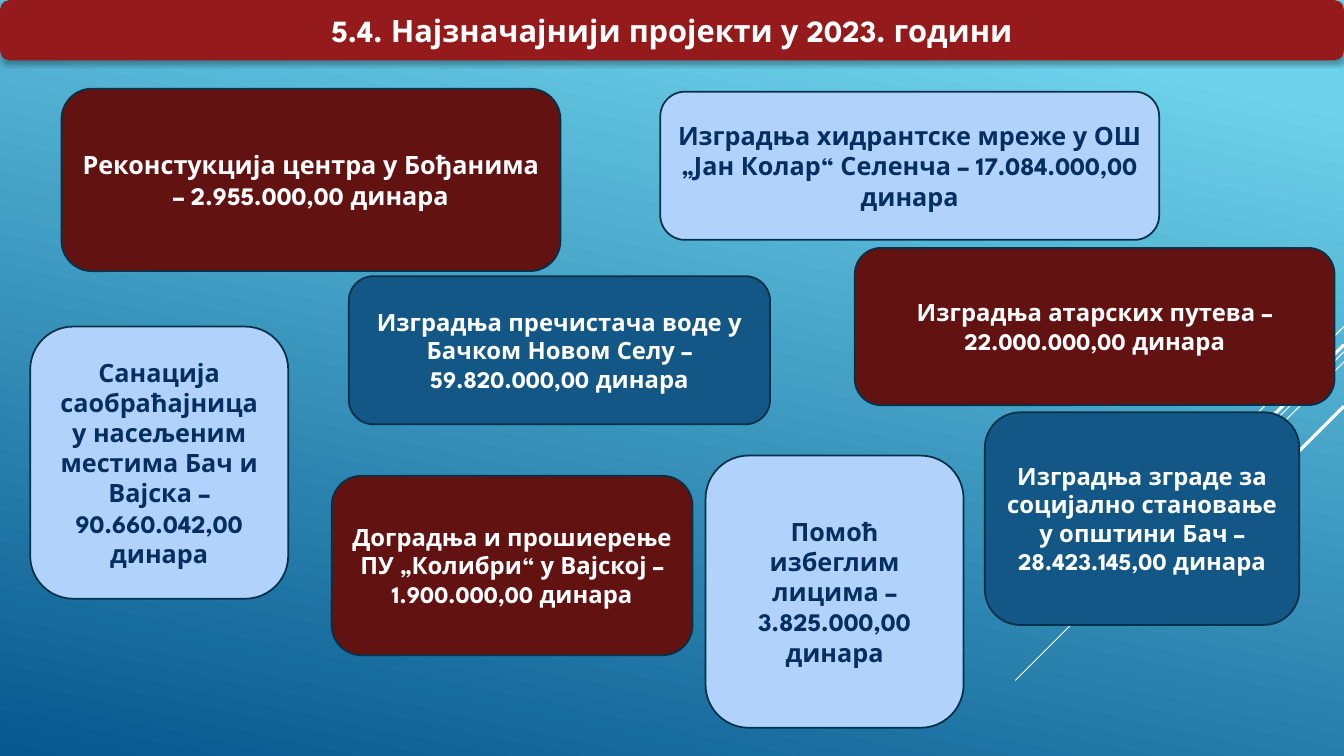
"""Build a slide of the most important projects of 2023."""
from dataclasses import dataclass

from lxml import etree
from pptx import Presentation
from pptx.dml.color import RGBColor
from pptx.enum.shapes import MSO_CONNECTOR, MSO_SHAPE
from pptx.enum.text import MSO_ANCHOR, PP_ALIGN
from pptx.oxml.ns import qn
from pptx.shapes.autoshape import Shape
from pptx.slide import Slide
from pptx.util import Inches, Length, Pt

ROUND = MSO_SHAPE.ROUNDED_RECTANGLE
STRAIGHT = MSO_CONNECTOR.STRAIGHT
MIDDLE = MSO_ANCHOR.MIDDLE
CENTER = PP_ALIGN.CENTER

COLS, ROWS = 133.33, 75
FONT = "League Spartan"
HEX = {
    "sky": "6ED2EB", "sea": "06588E", "white": "FFFFFF", "navy": "052F61",
    "red": "941A1B", "wine": "631212", "pale": "B1D3FB", "blue": "125785",
    "edge": "043148", "black": "000000",
}


@dataclass(frozen=True)
class Box:
    """A rounded box placed in grid columns and rows."""
    col: float
    row: float
    wide: float
    high: float
    fill: str
    size: int
    text: str
    ink: str = "white"


@dataclass(frozen=True)
class Ray:
    """A diagonal line running down and left from the right edge."""
    row: float
    reach: float
    width: float


TITLE = Box(0, 0, COLS, 6, "red", 22, "5.4. Најзначајнији пројекти у 2023. години")
BOXES = [
    Box(6.1, 8.8, 49.5, 18.1, "wine", 18,
        "Реконстукција центра у Бођанима – 2.955.000,00 динара"),
    Box(32.9, 47.2, 35.8, 17.8, "wine", 17,
        "Доградња и прошиерење ПУ „Колибри“ у Вајској – 1.900.000,00 динара"),
    Box(65.5, 9.1, 49.5, 14.7, "pale", 18,
        "Изградња хидрантске мреже у ОШ „Јан Колар“ Селенча – 17.084.000,00 динара",
        "navy"),
    Box(84.8, 24.6, 47.6, 15.6, "wine", 17,
        "Изградња атарских путева – 22.000.000,00 динара"),
    Box(70, 45.2, 25.6, 27, "pale", 18,
        "Помоћ избеглим лицима – 3.825.000,00 динара", "navy"),
    Box(34.6, 27.4, 41.8, 14.7, "blue", 17,
        "Изградња пречистача воде у Бачком Новом Селу – 59.820.000,00 динара"),
    Box(97.7, 40.9, 31.2, 21.1, "blue", 17,
        "Изградња зграде за социјално становање у општини Бач – 28.423.145,00 динара"),
    Box(3, 32.4, 25.6, 27, "pale", 18,
        "Санација саобраћајница у насељеним местима Бач и Вајска – "
        "90.660.042,00 динара", "navy"),
]
RAYS = [
    Ray(32.4, 10, 0.75), Ray(34.9, 32.6, 0.75), Ray(35.9, 20.7, 0.75),
    Ray(34.2, 19.1, 2.25), Ray(40.3, 13.9, 2.25),
]


def grid(cells: float) -> Length:
    """Turn grid cells into a length."""
    return Inches(cells / 10)


def shade(name: str) -> RGBColor:
    """Look up a named colour."""
    return RGBColor.from_string(HEX[name])


def paint(slide: Slide) -> None:
    """Fill the background with a slanted gradient."""
    fill = slide.background.fill
    fill.gradient()
    fill.gradient_angle = 360 - 102
    for stop, place, name in zip(fill.gradient_stops, (0.1, 1), ("sky", "sea")):
        stop.position = place
        stop.color.rgb = shade(name)


def draw_ray(slide: Slide, ray: Ray) -> None:
    """Draw one diagonal line."""
    line = slide.shapes.add_connector(
        STRAIGHT, grid(COLS), grid(ray.row),
        grid(COLS - ray.reach), grid(ray.row + ray.reach))
    line.line.color.rgb = shade("white")
    line.line.width = Pt(ray.width)
    etree.SubElement(line.element.spPr, qn("a:effectLst"))


def draw_box(slide: Slide, box: Box) -> Shape:
    """Draw one rounded box with bold centred text."""
    shape = slide.shapes.add_shape(
        ROUND, grid(box.col), grid(box.row), grid(box.wide), grid(box.high))
    shape.shadow.inherit = False
    shape.fill.solid()
    shape.fill.fore_color.rgb = shade(box.fill)
    shape.line.color.rgb = shade("edge")
    shape.line.width = Pt(1.25)
    frame = shape.text_frame
    frame.word_wrap = True
    frame.vertical_anchor = MIDDLE
    para = frame.paragraphs[0]
    para.text = box.text
    para.alignment = CENTER
    para.font.name = FONT
    para.font.size = Pt(box.size)
    para.font.bold = True
    para.font.color.rgb = shade(box.ink)
    return shape


def draw_title(slide: Slide) -> None:
    """Draw the title bar, which has a soft shadow and no outline."""
    bar = draw_box(slide, TITLE)
    bar.line.fill.background()
    effects = bar.element.spPr.find(qn("a:effectLst"))
    cast = etree.SubElement(
        effects, qn("a:outerShdw"), blurRad=str(Pt(3.5)), dist=str(Pt(2.2)),
        dir=str(90 * 60000), algn="ctr", rotWithShape="0")
    tone = etree.SubElement(cast, qn("a:srgbClr"), val=HEX["black"])
    etree.SubElement(tone, qn("a:alpha"), val=str(32 * 1000))


def main() -> None:
    """Build and save the deck."""
    deck = Presentation()
    deck.slide_width, deck.slide_height = grid(COLS), grid(ROWS)
    slide = deck.slides.add_slide(deck.slide_layouts[6])
    paint(slide)
    for ray in RAYS:
        draw_ray(slide, ray)
    draw_title(slide)
    for box in BOXES:
        draw_box(slide, box)
    deck.save("out.pptx")


if __name__ == "__main__":
    main()
